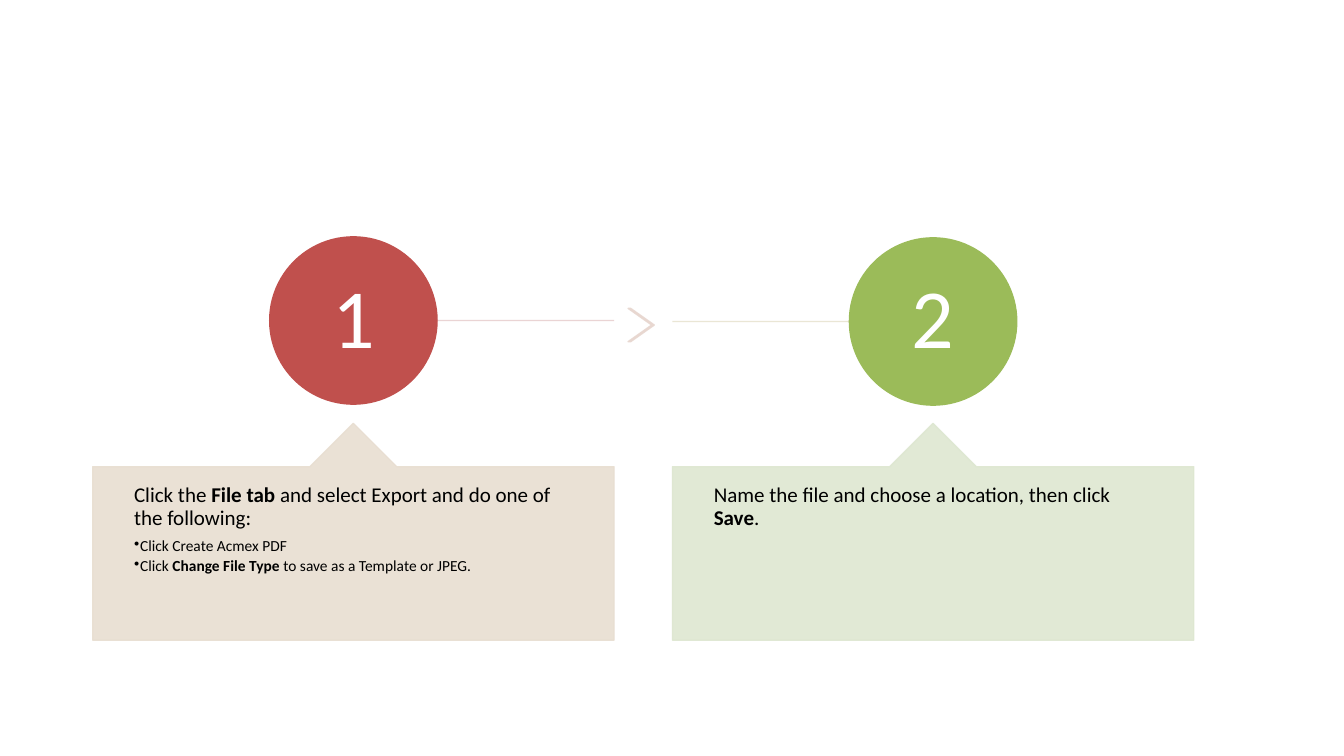
"""Build a two-step slide on exporting and saving a file."""
from lxml.etree import SubElement
from pptx import Presentation
from pptx.dml.color import RGBColor
from pptx.enum.shapes import MSO_CONNECTOR, MSO_SHAPE
from pptx.enum.text import MSO_ANCHOR, PP_ALIGN
from pptx.oxml.ns import qn
from pptx.util import Inches, Pt


def paint(color_format, color, alpha=100):
    color_format.rgb = RGBColor.from_string(color)


def style(shape, color, alpha=100):
    properties = shape._element.spPr
    if hasattr(shape, "fill"):
        shape.shadow.inherit = False
        shape.fill.solid()
        shape.fill.fore_color.rgb = RGBColor.from_string(color)
    shape.line.color.rgb = RGBColor.from_string(color)
    shape.line.width = Pt(1)
    if not hasattr(shape, "fill"):
        SubElement(properties, qn("a:effectLst"))
    if alpha < 100:
        for color_element in properties.iter(qn("a:srgbClr")):
            SubElement(color_element, qn("a:alpha")).set("val", str(alpha * 1000))


steps = [
    {
        "number": "1", "left": 0.92, "circle_top": 2.35,
        "circle": "C0504D", "callout": "E8DED1",
        "line": "E8D0D0", "line_ends": (3.79, 6.09),
        "text": [
            (0, [("Click the ", False), ("File tab", True),
                 (" and select Export and do one of the following:", False)]),
            (1, [("Click Create Acmex PDF", False)]),
            (1, [("Click ", False), ("Change File Type", True),
                 (" to save as a Template or JPEG.", False)]),
        ],
    },
    {
        "number": "2", "left": 6.67, "circle_top": 2.36,
        "circle": "9BBB59", "callout": "DEE7D1",
        "line": "E8E4D1", "line_ends": (6.67, 9.26),
        "text": [
            (0, [("Name the file and choose a location, then click ", False),
                 ("Save", True), (".", False)]),
        ],
    },
]
callout_width, callout_height, box_height = 5.17, 2.15, 1.72
diameter, number_size = 1.66, 1.18

presentation = Presentation()
presentation.slide_width = Inches(13.33)
presentation.slide_height = Inches(7.5)
slide = presentation.slides.add_slide(presentation.slide_layouts[6])
shapes = slide.shapes

chevron = shapes.add_shape(
    MSO_SHAPE.CHEVRON, Inches(6.23), Inches(3.06), Inches(0.26), Inches(0.33))
chevron.adjustments[0] = 0.9
style(chevron, "E8D7D0", 90)

for step in steps:
    center = step["left"] + callout_width / 2
    circle_middle = step["circle_top"] + diameter / 2

    start, end = step["line_ends"]
    line = shapes.add_connector(
        MSO_CONNECTOR.STRAIGHT, Inches(start), Inches(circle_middle),
        Inches(end), Inches(circle_middle))
    style(line, step["line"], 90)

    circle = shapes.add_shape(
        MSO_SHAPE.OVAL, Inches(center - diameter / 2), Inches(step["circle_top"]),
        Inches(diameter), Inches(diameter))
    style(circle, step["circle"])

    number_box = shapes.add_textbox(
        Inches(center - number_size / 2), Inches(2.6),
        Inches(number_size), Inches(number_size))
    frame = number_box.text_frame
    frame.word_wrap = True
    frame.vertical_anchor = MSO_ANCHOR.MIDDLE
    frame.margin_left = frame.margin_right = Inches(0.07)
    frame.margin_top = frame.margin_bottom = Inches(0.07)
    paragraph = frame.paragraphs[0]
    paragraph.text = step["number"]
    paragraph.alignment = PP_ALIGN.CENTER
    paragraph.line_spacing = 0.9
    paragraph.font.size = Pt(60)
    paragraph.font.name = "Calibri"
    paragraph.font.color.rgb = RGBColor.from_string("FFFFFF")

    callout = shapes.add_shape(
        MSO_SHAPE.UP_ARROW_CALLOUT, Inches(step["left"]), Inches(4.2),
        Inches(callout_width), Inches(callout_height))
    for index, value in enumerate((0.5, 0.2, 0.2, 1)):
        callout.adjustments[index] = value
    style(callout, step["callout"], 90)

    text_box = shapes.add_textbox(
        Inches(step["left"]), Inches(4.2 + callout_height - box_height),
        Inches(callout_width), Inches(box_height))
    frame = text_box.text_frame
    frame.word_wrap = True
    frame.margin_left = frame.margin_right = Inches(0.41)
    frame.margin_top = frame.margin_bottom = Inches(0.18)
    for index, (level, runs) in enumerate(step["text"]):
        paragraph = frame.add_paragraph() if index else frame.paragraphs[0]
        paragraph.level = level
        paragraph.line_spacing = 0.9
        paragraph.space_after = Pt(2 if level else 6)
        paragraph.font.size = Pt(11 if level else 15)
        paragraph.font.name = "Calibri"
        paragraph.font.color.rgb = RGBColor.from_string("000000")
        if level:
            properties = paragraph._p.get_or_add_pPr()
            properties.set("marL", str(Inches(0.06)))
            properties.set("indent", str(Inches(-0.06)))
            bullet = properties.makeelement(qn("a:buChar"), {"char": "•"})
            properties.find(qn("a:defRPr")).addprevious(bullet)
        for text, bold in runs:
            run = paragraph.add_run()
            run.text = text
            run.font.bold = bold

presentation.save("out.pptx")
